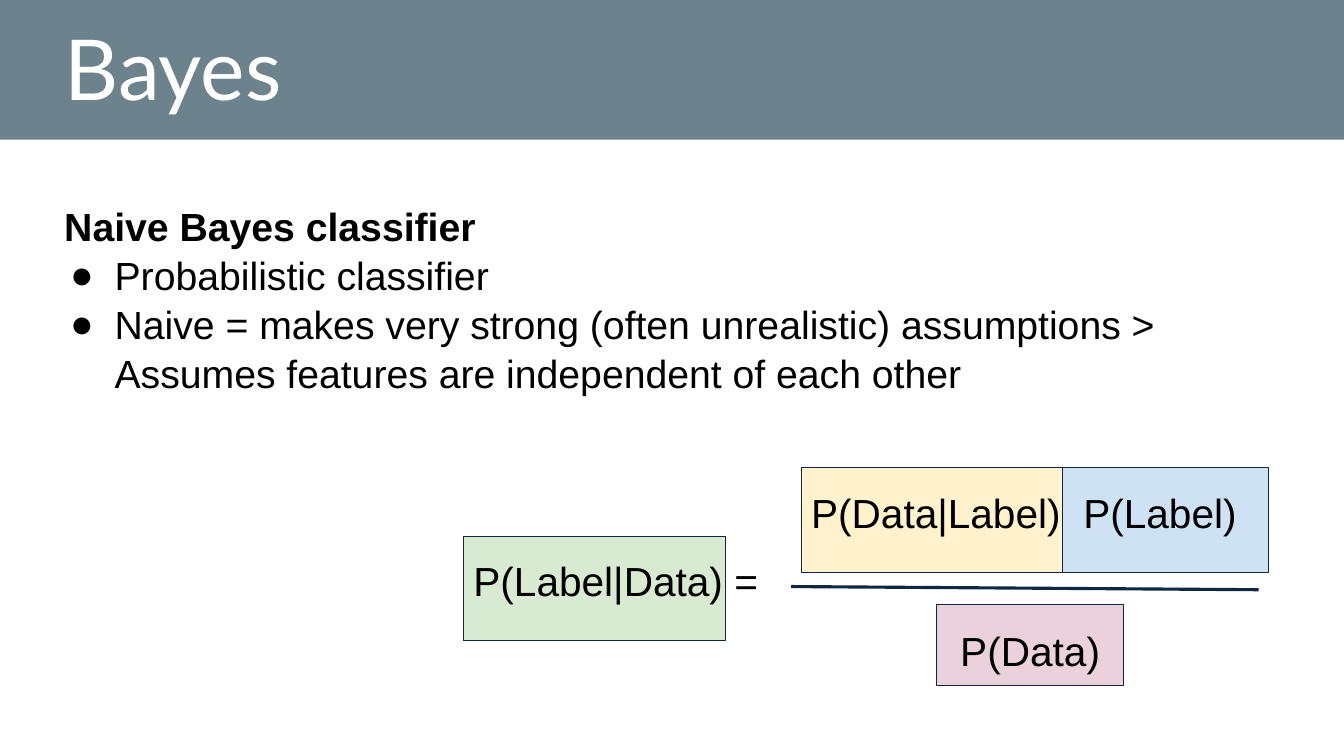
from lxml import etree
from pptx import Presentation, util as u
from pptx.dml.color import RGBColor
from pptx.enum import shapes, text
from pptx.oxml.ns import qn

COLORS = {
    "band": "0B3041", "outline": "0E2841", "text": "000000", "title": "FFFFFF",
    "label": "CFE2F3", "likelihood": "FFF2CC", "data": "EAD1DC", "posterior": "D9EAD3",
}


def rgb(name):
    return RGBColor.from_string(COLORS[name])


def cm(*lengths):
    return [u.Cm(length) for length in lengths]


class BayesSlide:
    font = "Arial"
    inset = u.Cm(0.25)

    def __init__(self, presentation):
        self.slide = presentation.slides.add_slide(presentation.slide_layouts[5])
        self.formula = self.slide.shapes.add_group_shape()

    def style(self, paragraph, size, color="text", font=None, bold=False):
        paragraph.font.name = font or self.font
        paragraph.font.size = u.Pt(size)
        paragraph.font.bold = bold
        paragraph.font.color.rgb = rgb(color)

    def title(self, wording, *box):
        title = self.slide.shapes.title
        title.left, title.top, title.width, title.height = cm(*box)
        frame = title.text_frame
        frame.text = wording
        frame.auto_size = text.MSO_AUTO_SIZE.NONE
        frame.vertical_anchor = text.MSO_ANCHOR.BOTTOM
        paragraph = frame.paragraphs[0]
        paragraph.alignment = text.PP_ALIGN.LEFT
        paragraph.line_spacing = 0.9
        self.style(paragraph, 60, "title", "Lato")

    def rectangle(self, parent, color, *box):
        shape = parent.shapes.add_shape(shapes.MSO_SHAPE.RECTANGLE, *cm(*box))
        shape.shadow.inherit = False
        shape.fill.solid()
        shape.fill.fore_color.rgb = rgb(color)
        return shape

    def band(self, *box):
        """Add the translucent header strip behind everything else."""
        band = self.rectangle(self.slide, "band", *box)
        band.line.fill.background()
        color = band.fill._xPr.find(".//" + qn("a:srgbClr"))
        etree.SubElement(color, qn("a:alpha"), val="60000")
        self.slide.shapes._spTree.insert(2, band._element)

    def term_box(self, color, *box):
        shape = self.rectangle(self.formula, color, *box)
        shape.line.color.rgb = rgb("outline")
        shape.line.width = u.Pt(0.75)

    def text_box(self, parent, *box):
        frame = parent.shapes.add_textbox(*cm(*box)).text_frame
        frame.word_wrap = True
        frame.margin_left = frame.margin_right = self.inset
        frame.margin_top = frame.margin_bottom = self.inset
        return frame

    def bullet_text(self, heading, bullets, *box):
        frame = self.text_box(self.slide, *box)
        frame.text = "\n".join([heading, *bullets])
        for index, paragraph in enumerate(frame.paragraphs):
            if index:
                self.bullet(paragraph)
            paragraph.line_spacing = 1.04
            self.style(paragraph, 28, bold=index == 0)

    def bullet(self, paragraph):
        properties = paragraph._p.get_or_add_pPr()
        properties.set("marL", str(u.Cm(1.27)))
        properties.set("indent", str(u.Cm(-1.12)))
        color = etree.SubElement(properties, qn("a:buClr"))
        etree.SubElement(color, qn("a:srgbClr"), val=COLORS["text"])
        etree.SubElement(properties, qn("a:buFont"), typeface=self.font)
        etree.SubElement(properties, qn("a:buChar"), char="●")

    def term_text(self, wording, *box, tab=None):
        """Write part of the formula; tab is the stop for a second term."""
        paragraph = self.text_box(self.formula, *box).paragraphs[0]
        paragraph.text = wording
        if tab:
            properties = paragraph._p.get_or_add_pPr()
            stops = etree.SubElement(properties, qn("a:tabLst"))
            etree.SubElement(stops, qn("a:tab"), pos=str(u.Cm(tab)), algn="l")
        self.style(paragraph, 29)

    def fraction_line(self, *ends):
        line = self.formula.shapes.add_connector(
            shapes.MSO_CONNECTOR.STRAIGHT, *cm(*ends))
        line.line.color.rgb = rgb("outline")
        line.line.width = u.Pt(2.25)
        etree.SubElement(line._element.spPr, qn("a:effectLst"))


def main():
    presentation = Presentation()
    presentation.slide_width, presentation.slide_height = cm(33.87, 19.05)
    slide = BayesSlide(presentation)

    slide.band(0, 0, 33.87, 3.52)
    slide.title("Bayes", 1.37, 0, 31.32, 3.12)
    slide.bullet_text(
        "Naive Bayes classifier",
        ["Probabilistic classifier",
         "Naive = makes very strong (often unrealistic) assumptions > "
         "Assumes features are independent of each other"],
        1.37, 4.8, 31.32, 5.31)

    slide.term_box("label", 26.06, 11.79, 5.92, 2.64)
    slide.term_box("likelihood", 20.19, 11.79, 6.6, 2.64)
    slide.term_box("data", 23.6, 15.24, 4.72, 2.03)
    slide.term_box("posterior", 11.68, 13.51, 6.6, 2.64)
    slide.term_text("P(Label|Data) =", 11.68, 13.77, 7.9, 1.75)
    slide.term_text("P(Data|Label)\tP(Label)", 20.19, 12.04, 11.76, 1.75, tab=6.86)
    slide.term_text("P(Data)", 23.95, 15.52, 4.72, 1.75)
    slide.fraction_line(19.94, 14.78, 31.72, 14.86)

    presentation.save("out.pptx")


if __name__ == "__main__":
    main()
